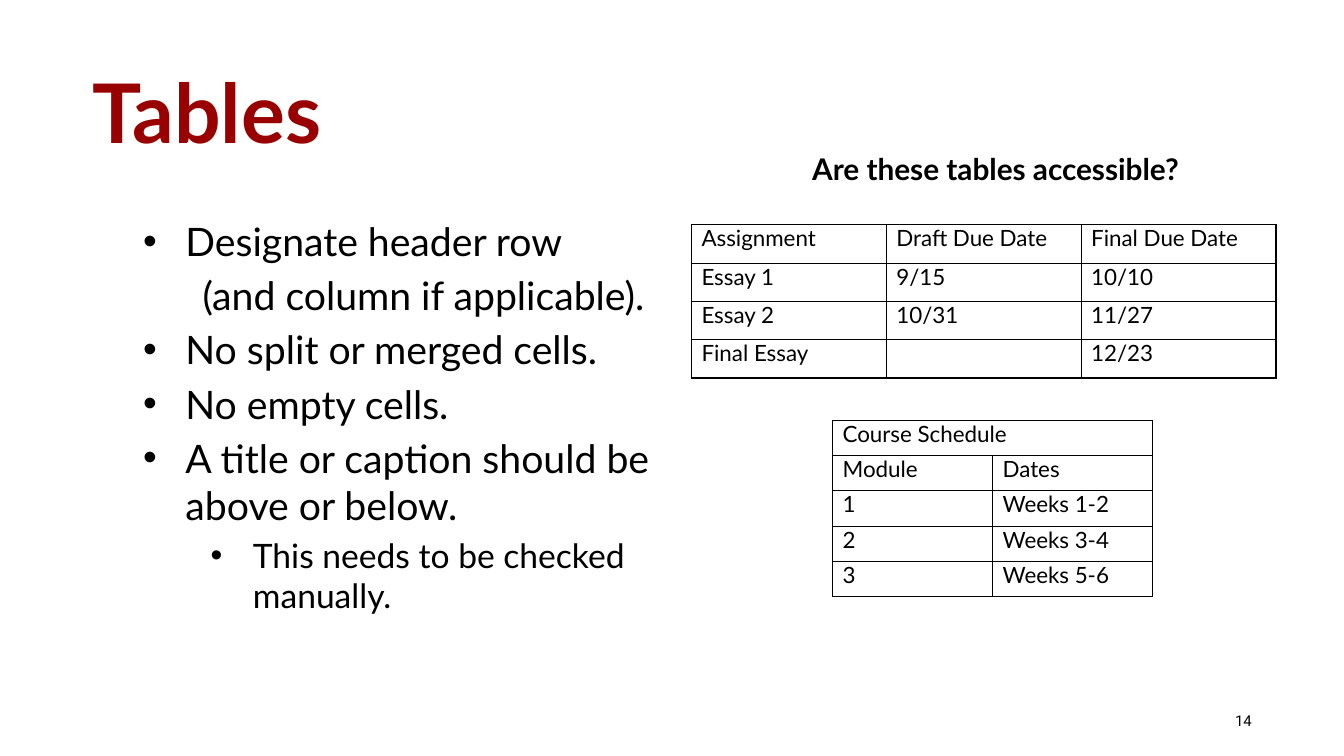
from lxml.etree import SubElement as SubEl
from pptx import Presentation
from pptx.dml.color import RGBColor as Rgb
from pptx.enum.text import MSO_ANCHOR as Anchor, MSO_AUTO_SIZE as Auto, PP_ALIGN as Align
from pptx.oxml.ns import qn
from pptx.util import Pt

COLORS = {"title": "990000", "text": "000000", "line": "000000"}
FONT = "Lato"

# Text, size, left indent, hanging indent, bullet
POINTS = [
    ("Designate header row", 28, 77.8, -30.2, True),
    ("(and column if applicable).", 28, 90, 0, False),
    ("No split or merged cells.", 28, 77.8, -30.2, True),
    ("No empty cells.", 28, 77.8, -30.2, True),
    ("A title or caption should be above or below.", 28, 77.8, -30.2, True),
    ("This needs to be checked manually.", 24, 126, -30.2, True),
]

ESSAYS = [
    ["Assignment", "Draft Due Date", "Final Due Date"],
    ["Essay 1", "9/15", "10/10"],
    ["Essay 2", "10/31", "11/27"],
    ["Final Essay", "", "12/23"],
]

COURSE = [
    ["Course Schedule", ""],
    ["Module", "Dates"],
    ["1", "Weeks 1-2"],
    ["2", "Weeks 3-4"],
    ["3", "Weeks 5-6"],
]


def add_run(para, text, size, color="text", bold=False, face=FONT):
    run = para.add_run()
    run.text = text
    font = run.font
    font.name, font.size, font.bold = face, Pt(size), bold
    font.color.rgb = Rgb.from_string(COLORS[color])


def set_frame(frame, inset=0, anchor=Anchor.TOP, wrap=True):
    frame.auto_size = Auto.NONE
    frame.word_wrap = wrap
    frame.vertical_anchor = anchor
    frame.margin_left = frame.margin_right = Pt(inset)
    frame.margin_top = frame.margin_bottom = Pt(inset / 2)


def add_box(slide, left, top, width, height, **look):
    box = slide.shapes.add_textbox(Pt(left), Pt(top), Pt(width), Pt(height))
    set_frame(box.text_frame, **look)
    return box.text_frame


def set_title(slide, text):
    title = slide.shapes.title
    title.left, title.top, title.width, title.height = Pt(66), Pt(6.6), Pt(828), Pt(104.4)
    set_frame(title.text_frame, anchor=Anchor.BOTTOM)
    para = title.text_frame.paragraphs[0]
    para.alignment = Align.LEFT
    para.line_spacing = 0.6
    add_run(para, text, 58.7, "title", True)


def add_list(slide, points):
    frame = add_box(slide, 54.7, 155.5, 443.5, 335.5)
    for num, (text, size, left, hang, dot) in enumerate(points):
        para = frame.add_paragraph() if num else frame.paragraphs[0]
        props = para._p.get_or_add_pPr()
        props.set("marL", str(Pt(left)))
        props.set("indent", str(Pt(hang)))
        if num:
            para.space_before = Pt(5)
        if dot:
            tint = SubEl(props, qn("a:buClr"))
            SubEl(tint, qn("a:srgbClr"), val=COLORS["text"])
            SubEl(props, qn("a:buFont"), typeface="Arial")
            SubEl(props, qn("a:buChar"), char="•")
        add_run(para, text, size)


def set_cell(cell, text):
    cell.margin_left = cell.margin_right = Pt(7.2)
    cell.margin_top = cell.margin_bottom = Pt(0)
    # Borders come before the fill
    props = cell._tc.get_or_add_tcPr()
    for side in ("lnL", "lnR", "lnT", "lnB"):
        line = SubEl(props, qn("a:" + side), w=str(Pt(1)))
        fill = SubEl(line, qn("a:solidFill"))
        SubEl(fill, qn("a:srgbClr"), val=COLORS["line"])
    cell.fill.background()
    para = cell.text_frame.paragraphs[0]
    para.font.size = Pt(16)
    if text:
        add_run(para, text, 16)


def add_grid(slide, rows, left, top, wide, high):
    count = len(rows[0])
    table = slide.shapes.add_table(len(rows), count, Pt(left), Pt(top),
                                   Pt(wide * count), Pt(high * len(rows))).table
    table.first_row = table.horz_banding = False
    for col in table.columns:
        col.width = Pt(wide)
    for row, texts in zip(table.rows, rows):
        row.height = Pt(high)
        for cell, text in zip(row.cells, texts):
            set_cell(cell, text)
    return table


def main():
    deck = Presentation()
    deck.slide_width, deck.slide_height = Pt(960), Pt(540)
    slide = deck.slides.add_slide(deck.slide_layouts[5])

    # Title and list
    set_title(slide, "Tables")
    add_list(slide, POINTS)

    # Tables with their heading
    head = add_box(slide, 573.1, 104.4, 290.2, 61.9, inset=7.2, wrap=False)
    add_run(head.paragraphs[0], "Are these tables accessible?", 21.3, bold=True)
    add_grid(slide, ESSAYS, 493.9, 160.6, 139.2, 27.36)
    course = add_grid(slide, COURSE, 594.7, 300.2, 114.3, 25.2)
    course.cell(0, 0).merge(course.cell(0, 1))

    # Slide number
    foot = add_box(slide, 678.2, 500.4, 216, 28.8, anchor=Anchor.MIDDLE)
    foot.paragraphs[0].alignment = Align.RIGHT
    add_run(foot.paragraphs[0], "14", 10.7, face="Roboto")

    deck.save("out.pptx")


if __name__ == "__main__":
    main()
